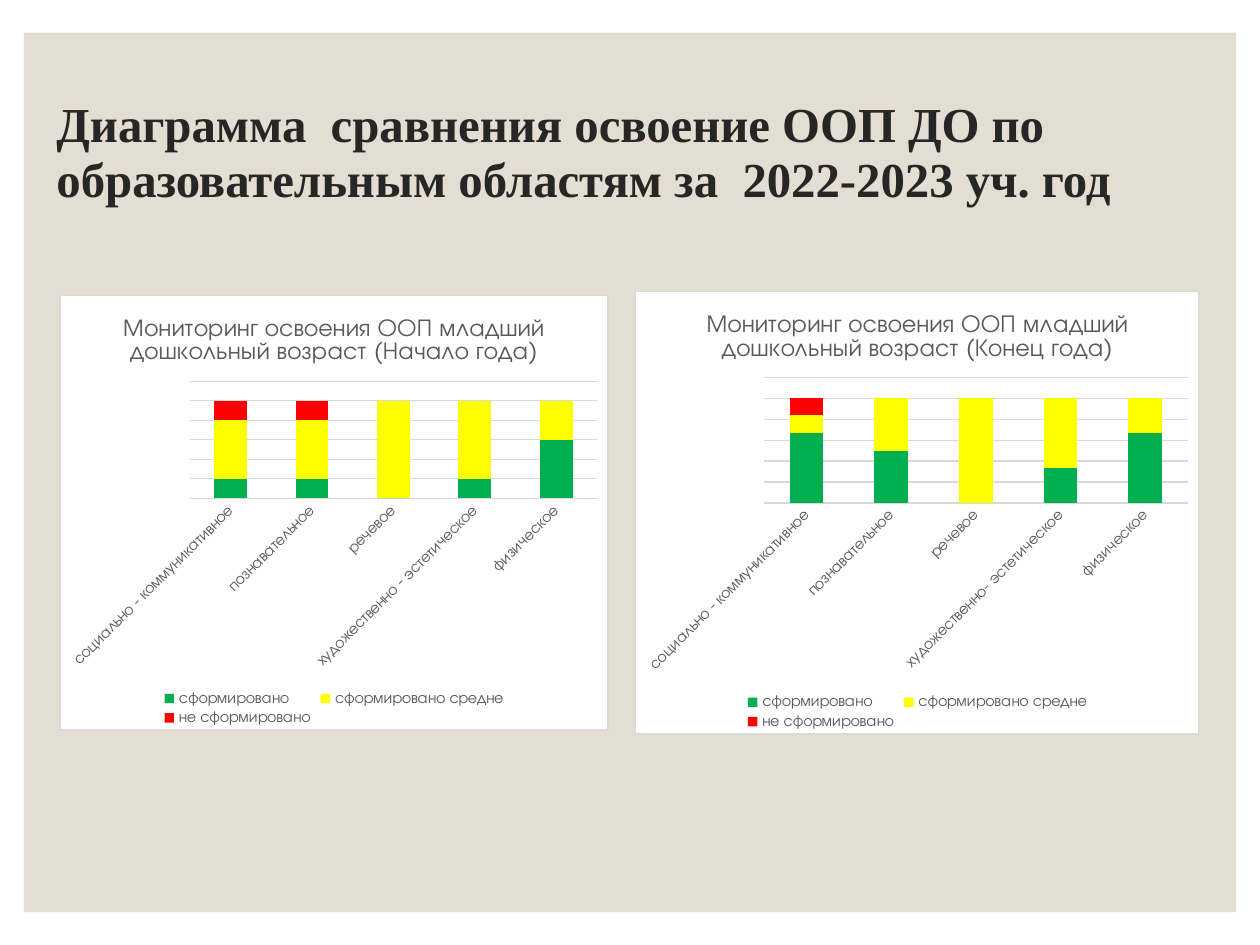
from lxml import etree
from pptx import Presentation
from pptx.chart.data import CategoryChartData
from pptx.dml.color import RGBColor
from pptx.enum.chart import XL_CHART_TYPE, XL_LEGEND_POSITION, XL_TICK_MARK
from pptx.enum.shapes import MSO_SHAPE
from pptx.oxml.ns import qn
from pptx.util import Inches, Pt

STACKED = XL_CHART_TYPE.COLUMN_STACKED
LEGEND_BOTTOM = XL_LEGEND_POSITION.BOTTOM
NO_TICK = XL_TICK_MARK.NONE
RECTANGLE = MSO_SHAPE.RECTANGLE

COLORS = {
    "panel": "E3DED1",
    "heading": "262626",
    "label": "595959",
    "rule": "D9D9D9",
    "card": "FFFFFF",
}
HEADING_FONT = "Times New Roman"
CHART_FONT = "TeX Gyre Adventor"

HEADING = "Диаграмма  сравнения освоение ООП ДО по образовательным областям за  2022-2023 уч. год"
LEVELS = {
    "сформировано": "00B050",
    "сформировано средне": "FFFF00",
    "не сформировано": "FF0000",
}
START_AREAS = ["социально - коммуникативное", "познавательное", "речевое",
               "художественно - эстетическое", "физическое"]
END_AREAS = [area.replace("художественно -", "художественно-") for area in START_AREAS]
MONITORING = [
    ("Начало года", (0.47, 2.34, 4.36, 3.46), START_AREAS,
     [(20, 20, 0, 20, 60), (60, 60, 100, 80, 40), (20, 20, 0, 0, 0)]),
    ("Конец года", (5.04, 2.31, 4.48, 3.52), END_AREAS,
     [(67, 50, 0, 33, 67), (17, 50, 100, 67, 33), (16, 0, 0, 0, 0)]),
]


def rgb(name):
    return RGBColor.from_string(COLORS[name])


def style_font(font, size, color, face, bold=False):
    font.size = Pt(size)
    font.color.rgb = rgb(color)
    font.name = face
    font.bold = bold


def write_text(frame, text, spacing=None, **style):
    paragraph = frame.paragraphs[0]
    paragraph.line_spacing = spacing
    run = paragraph.add_run()
    run.text = text
    style_font(run.font, **style)


def add_panel(slide):
    panel = slide.shapes.add_shape(
        RECTANGLE, Inches(0.19), Inches(0.26), Inches(9.62), Inches(6.98))
    panel.shadow.inherit = False
    panel.fill.solid()
    panel.fill.fore_color.rgb = rgb("panel")
    panel.line.fill.background()


def add_heading(slide):
    heading = slide.shapes.add_textbox(
        Inches(0.35), Inches(0.78), Inches(9.4), Inches(0.9)).text_frame
    heading.word_wrap = True
    heading.margin_top = heading.margin_bottom = 0
    write_text(heading, HEADING, spacing=0.94, size=27.9, color="heading",
               face=HEADING_FONT, bold=True)


def frame_chart(chart):
    properties = etree.Element(qn("c:spPr"))
    border = etree.Element(qn("a:ln"), w=str(Pt(0.75)))
    for parent, color in ((properties, "card"), (border, "rule")):
        fill = etree.SubElement(parent, qn("a:solidFill"))
        etree.SubElement(fill, qn("a:srgbClr"), val=COLORS[color])
    properties.append(border)
    chart.element.find(qn("c:chart")).addnext(properties)


def style_axes(chart):
    areas = chart.category_axis
    areas.major_tick_mark = areas.minor_tick_mark = NO_TICK
    areas.format.line.fill.background()
    style_font(areas.tick_labels.font, 9, "label", CHART_FONT)
    area_axis = next(chart.element.iter(qn("c:catAx")))
    label_body = area_axis.find(qn("c:txPr")).find(qn("a:bodyPr"))
    label_body.set("rot", str(-45 * 60000))
    label_body.set("vert", "horz")

    shares = chart.value_axis
    shares.minimum_scale, shares.maximum_scale, shares.major_unit = 0, 120, 20
    shares.visible = False
    shares.has_major_gridlines = True
    rule = shares.major_gridlines.format.line
    rule.color.rgb = rgb("rule")
    rule.width = Pt(0.75)


def add_monitoring_chart(slide, period, place, areas, results):
    data = CategoryChartData()
    data.categories = areas
    for level, shares in zip(LEVELS, results):
        data.add_series(level, shares)
    chart = slide.shapes.add_chart(STACKED, *map(Inches, place), data).chart

    style_font(chart.font, 10, "label", CHART_FONT)
    frame_chart(chart)
    chart.has_title = True
    write_text(chart.chart_title.text_frame,
               f"Мониторинг освоения ООП младший дошкольный возраст ({period})",
               size=14, color="label", face=CHART_FONT)
    chart.chart_title.include_in_layout = False
    chart.has_legend = True
    chart.legend.position = LEGEND_BOTTOM
    chart.legend.include_in_layout = False
    style_font(chart.legend.font, 9, "label", CHART_FONT)
    style_axes(chart)

    plot = chart.plots[0]
    plot.gap_width, plot.overlap = 150, 100
    plot.vary_by_categories = False
    for series, color in zip(plot.series, LEVELS.values()):
        series.format.fill.solid()
        series.format.fill.fore_color.rgb = RGBColor.from_string(color)


def main():
    deck = Presentation()
    deck.slide_width, deck.slide_height = Inches(10), Inches(7.5)
    slide = deck.slides.add_slide(deck.slide_layouts[6])
    add_panel(slide)
    add_heading(slide)
    for period, place, areas, results in MONITORING:
        add_monitoring_chart(slide, period, place, areas, results)
    deck.save("out.pptx")


if __name__ == "__main__":
    main()
